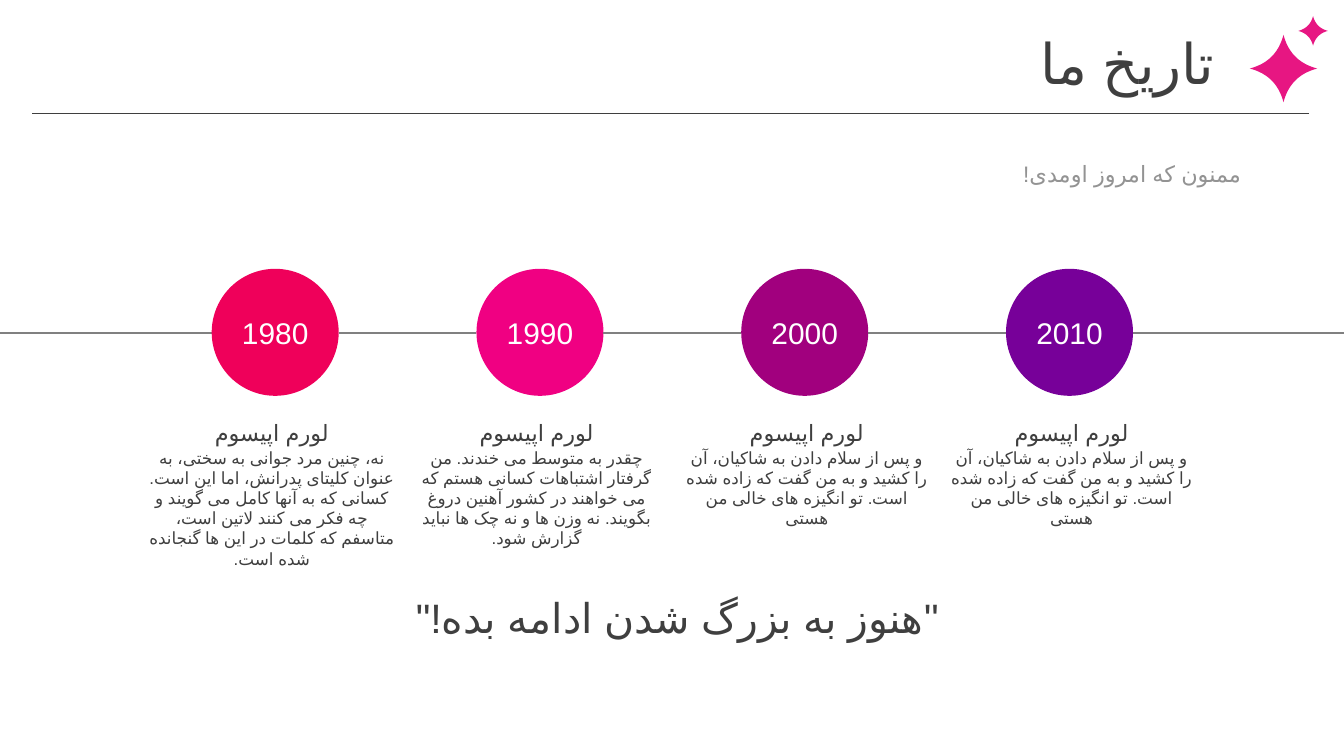
from dataclasses import dataclass
from lxml import etree
from pptx import Presentation, util as u
from pptx.dml.color import RGBColor as Rgb
from pptx.enum import shapes as es, text as et
from pptx.oxml.ns import qn


@dataclass(frozen=True)
class Theme:
    ink: str = "3F3F3F"
    soft: str = "939393"
    rail: str = "808080"
    white: str = "FFFFFF"
    star: str = "E71682"
    script: str = "Arial"
    title: int = 60
    quote: int = 44
    year: int = 32
    head: int = 24
    body: int = 18


th = Theme()
mid, right = et.PP_ALIGN.CENTER, et.PP_ALIGN.RIGHT
top, low = et.MSO_ANCHOR.TOP, et.MSO_ANCHOR.BOTTOM
centre = et.MSO_ANCHOR.MIDDLE


def write(shape, words, face, size, hue, align=mid, anchor=top, pad=(0.1, 0.05), wrap=True, **gaps):
    """Put one right-to-left paragraph into a shape."""
    frame = shape.text_frame
    px, py = map(u.Inches, pad)
    form = dict(auto_size=et.MSO_AUTO_SIZE.NONE, word_wrap=wrap, vertical_anchor=anchor,
                margin_left=px, margin_right=px, margin_top=py, margin_bottom=py)
    for key, val in form.items():
        setattr(frame, key, val)
    para = frame.paragraphs[0]
    for key, val in dict(alignment=align, **gaps).items():
        setattr(para, key, val)
    para._p.get_or_add_pPr().set("rtl", "1")
    run = para.add_run()
    run.text = words
    for key, val in dict(name=face, size=u.Pt(size), bold=False).items():
        setattr(run.font, key, val)
    run.font.color.rgb = Rgb.from_string(hue)
    # Persian letters use the complex-script font and their own language
    props = run._r.get_or_add_rPr()
    props.set("lang", "fa-IR")
    etree.SubElement(props, qn("a:cs")).set("typeface", th.script)


def rule(x1, x2, y, hue, wide):
    """Draw a level line without shadow."""
    line = slide.shapes.add_connector(es.MSO_CONNECTOR.STRAIGHT, *map(u.Inches, (x1, y, x2, y)))
    line.line.color.rgb = Rgb.from_string(hue)
    line.line.width = u.Pt(wide)
    etree.SubElement(line._element.spPr, qn("a:effectLst"))


deck = Presentation()
deck.slide_width, deck.slide_height = u.Inches(20), u.Inches(11.25)
slide = deck.slides.add_slide(deck.slide_layouts[5])

# Title, rule below it and subtitle
title = slide.shapes.title
box = dict(left=3.29, top=0.39, width=14.96, height=1.08)
for key, val in box.items():
    setattr(title, key, u.Inches(val))
write(title, "تاریخ ما", "Montserrat", th.title, th.ink, right, centre, (0.18, 0.09))
rule(19.48, 0.47, 1.69, th.ink, 0.75)
sub = slide.shapes.add_textbox(*map(u.Inches, (3.69, 2.28, 14.96, 0.58)))
write(sub, "ممنون که امروز اومدی!", "Calibri", th.head, th.soft, right, top, (0.18, 0.09),
      line_spacing=u.Pt(30), space_before=u.Pt(5))

# Timeline: year, circle colour, left of the text, story
same = "و پس از سلام دادن به شاکیان، آن را کشید و به من گفت که زاده شده است. تو انگیزه های خالی من هستی"
steps = [
    ("1980", "EF005A", 2.12, "نه، چنین مرد جوانی به سختی، به عنوان کلیتای پدرانش، اما این است. "
     "کسانی که به آنها کامل می گویند و چه فکر می کنند لاتین است، "
     "متاسفم که کلمات در این ها گنجانده شده است."),
    ("1990", "F00082", 6.06, "چقدر به متوسط می خندند. من گرفتار اشتباهات کسانی هستم که "
     "می خواهند در کشور آهنین دروغ بگویند. نه وزن ها و نه چک ها نباید گزارش شود."),
    ("2000", "A1007E", 10.08, same),
    ("2010", "770099", 14.02, same),
]
first, pitch, size, level = 3.15, 3.94, 1.89, 4
rail = 4.95
start = 0
for num, (year, hue, left, story) in enumerate(steps):
    x = first + num * pitch
    rule(start, x, rail, th.rail, 2.25)
    start = x + size
    disc = slide.shapes.add_shape(es.MSO_SHAPE.OVAL, *map(u.Inches, (x, level, size, size)))
    disc.shadow.inherit = False
    disc.fill.solid()
    disc.fill.fore_color.rgb = Rgb.from_string(hue)
    disc.line.fill.background()
    write(disc, year, "Roboto", th.year, th.white, anchor=centre, wrap=False)
    head = slide.shapes.add_textbox(*map(u.Inches, (left, 6.18, 3.85, 0.5)))
    write(head, "لورم اپیسوم", "Montserrat", th.head, th.ink, anchor=low)
    body = slide.shapes.add_textbox(*map(u.Inches, (left, 6.61, 3.85, 1.31)))
    write(body, story, "Roboto", th.body, th.ink)
rule(start, 20, rail, th.rail, 2.25)

# Closing quote
quote = slide.shapes.add_textbox(*map(u.Inches, (1.1, 8.77, 17.96, 1.18)))
write(quote, '"هنوز به بزرگ شدن ادامه بده!"', "Arial", th.quote, th.ink, space_before=u.Pt(9))

# Stars: one curved side, turned four times about the centre
side = []
for step in range(12):
    t = step / 12
    a, b, c, d = (1 - t) ** 3, 3 * t * (1 - t) ** 2, 3 * t * t * (1 - t), t ** 3
    side.append((a + 0.47 * b + 0.14 * c, 0.14 * b + 0.47 * c + d))
ring = []
for turn in range(4):
    ring += side
    side = [(-y, x) for x, y in side]
for cx, cy, rad in ((19.1, 1.02, 0.5), (19.54, 0.46, 0.22)):
    dots = [(u.Inches(cx + rad * x), u.Inches(cy + rad * y)) for x, y in ring]
    pen = slide.shapes.build_freeform(*dots[0])
    pen.add_line_segments(dots[1:], close=True)
    star = pen.convert_to_shape()
    star.shadow.inherit = False
    star.fill.solid()
    star.fill.fore_color.rgb = Rgb.from_string(th.star)
    star.line.fill.background()

deck.save("out.pptx")
